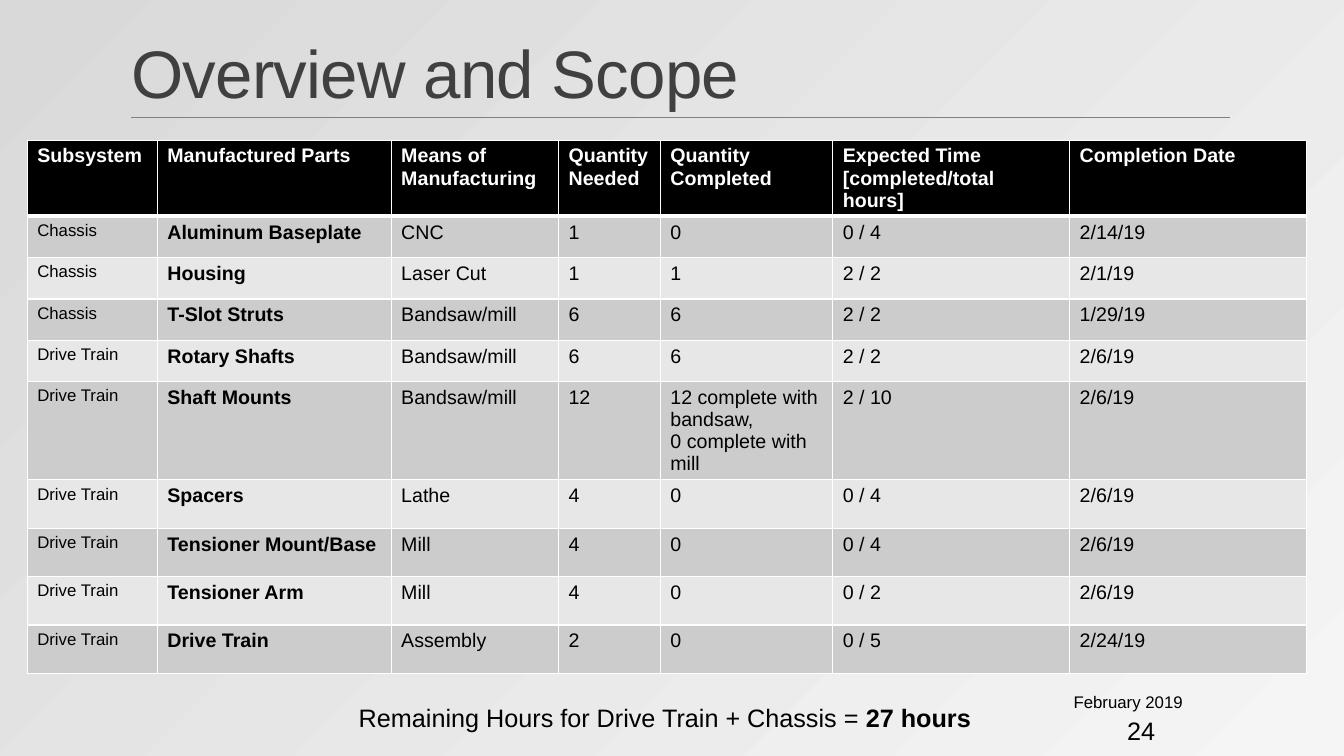
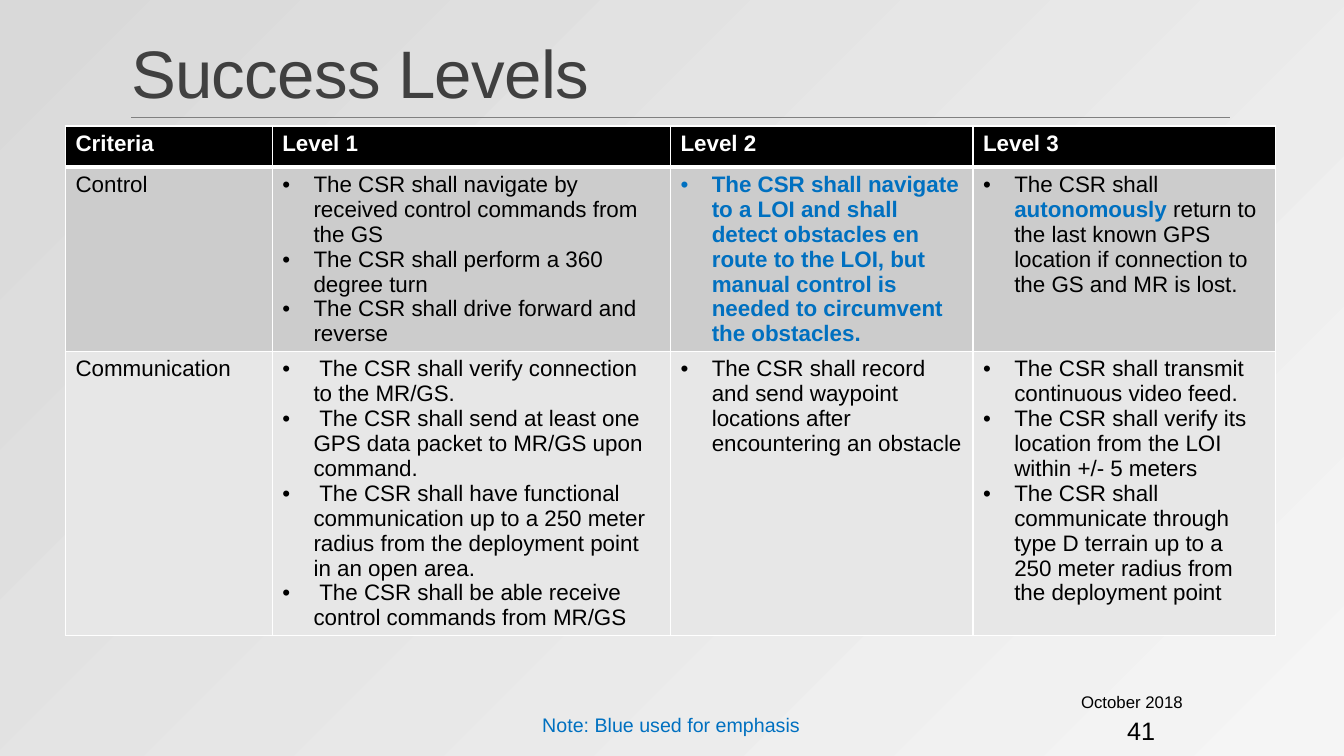
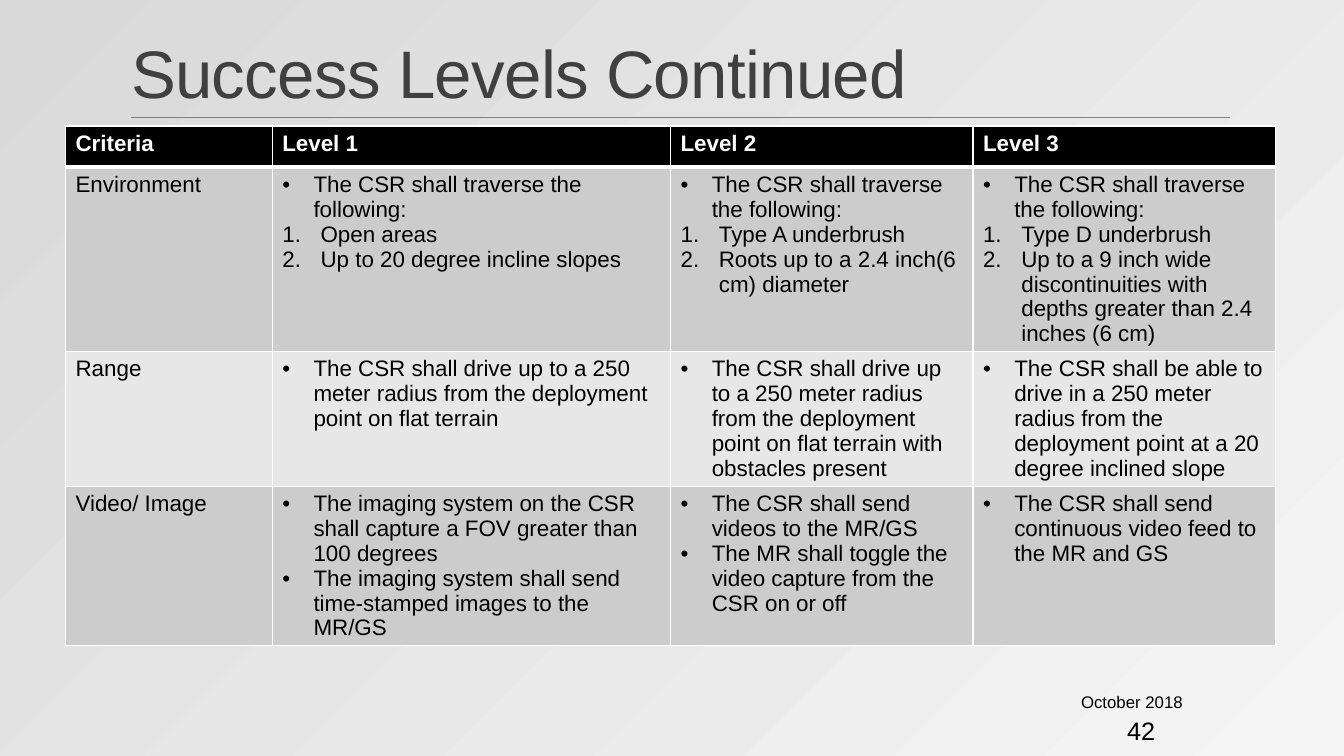
"""Build three project review slides with a parts table and two success level tables."""
from dataclasses import dataclass

from pptx import Presentation
from pptx.dml.color import RGBColor
from pptx.enum.shapes import MSO_CONNECTOR
from pptx.enum.text import MSO_ANCHOR, MSO_AUTO_SIZE as AutoSize, PP_ALIGN
from pptx.oxml import parse_xml
from pptx.oxml.ns import nsdecls, qn
from pptx.util import Pt

PX = 9144


@dataclass(frozen=True)
class Theme:
    font: str = "Arial"
    ink: str = "000000"
    title: str = "404040"
    rule: str = "808080"
    light: str = "F5F5F5"
    dark: str = "D9D9D9"
    white: str = "FFFFFF"
    emphasis: str = "0070C0"
    bands: tuple = ("E7E7E7", "CCCCCC")
    title_size: int = 48
    large: int = 18
    level: int = 16
    normal: int = 14
    small: int = 12


THEME = Theme()

PARTS_COLUMNS = [129, 232, 166, 101, 171, 235, 235]
PARTS_HEIGHTS = [75, 41, 41, 41, 41, 97, 48, 48, 48, 48]
PARTS = [
    ("Subsystem", "Manufactured Parts", "Means of Manufacturing", "Quantity Needed",
     "Quantity Completed", "Expected Time\n[completed/total hours]", "Completion Date"),
    ("Chassis", "Aluminum Baseplate", "CNC", "1", "0", "0 / 4", "2/14/19"),
    ("Chassis", "Housing", "Laser Cut", "1", "1", "2 / 2", "2/1/19"),
    ("Chassis", "T-Slot Struts", "Bandsaw/mill", "6", "6", "2 / 2", "1/29/19"),
    ("Drive Train", "Rotary Shafts", "Bandsaw/mill", "6", "6", "2 / 2", "2/6/19"),
    ("Drive Train", "Shaft Mounts", "Bandsaw/mill", "12",
     "12 complete with bandsaw,\n0 complete with mill", "2 / 10", "2/6/19"),
    ("Drive Train", "Spacers", "Lathe", "4", "0", "0 / 4", "2/6/19"),
    ("Drive Train", "Tensioner Mount/Base", "Mill", "4", "0", "0 / 4", "2/6/19"),
    ("Drive Train", "Tensioner Arm", "Mill", "4", "0", "0 / 2", "2/6/19"),
    ("Drive Train", "Drive Train", "Assembly", "2", "0", "0 / 5", "2/24/19"),
]

LEVEL_COLUMNS = [205, 395, 300, 300]
LEVEL_HEADER = ("Criteria", "Level 1", "Level 2", "Level 3")
LEVELS = [
    LEVEL_HEADER,
    ("Control",
     "• The CSR shall navigate by received control commands from the GS\n"
     "• The CSR shall perform a 360 degree turn\n"
     "• The CSR shall drive forward and reverse",
     "• **The CSR shall navigate to a LOI and shall detect obstacles en route to the LOI, "
     "but manual control is needed to circumvent the obstacles.**",
     "• The CSR shall **autonomously** return to the last known GPS location "
     "if connection to the GS and MR is lost."),
    ("Communication",
     "•  The CSR shall verify connection to the MR/GS.\n"
     "•  The CSR shall send at least one GPS data packet to MR/GS upon command.\n"
     "•  The CSR shall have functional communication up to a 250 meter radius "
     "from the deployment point in an open area.\n"
     "•  The CSR shall be able receive control commands from MR/GS",
     "• The CSR shall record and send waypoint locations after encountering an obstacle",
     "• The CSR shall transmit continuous video feed.\n"
     "• The CSR shall verify its location from the LOI within +/- 5 meters\n"
     "• The CSR shall communicate through type D terrain up to a 250 meter radius "
     "from the deployment point"),
]
LEVELS_CONTINUED = [
    LEVEL_HEADER,
    ("Environment",
     "• The CSR shall traverse the following:\n"
     "# Open areas\n"
     "# Up to 20 degree incline slopes",
     "• The CSR shall traverse the following:\n"
     "# Type A underbrush\n"
     "# Roots up to a 2.4 inch(6 cm) diameter",
     "• The CSR shall traverse the following:\n"
     "# Type D underbrush\n"
     "# Up to a 9 inch wide discontinuities with depths greater than 2.4 inches (6 cm)"),
    ("Range",
     "• The CSR shall drive up to a 250 meter radius from the deployment point on flat terrain",
     "• The CSR shall drive up to a 250 meter radius from the deployment point "
     "on flat terrain with obstacles present",
     "• The CSR shall be able to drive in a 250 meter radius from the deployment point "
     "at a 20 degree inclined slope"),
    ("Video/ Image",
     "• The imaging system on the CSR shall capture a FOV greater than 100 degrees\n"
     "• The imaging system shall send time-stamped images to the MR/GS",
     "• The CSR shall send videos to the MR/GS\n"
     "• The MR shall toggle the video capture from the CSR on or off",
     "• The CSR shall send continuous video feed to the MR and GS"),
]

LIST_MARKS = {
    "• ": (31, '<a:buFont {} typeface="Arial"/>', '<a:buChar {} char="•"/>'),
    "# ": (38, '<a:buFont {} typeface="+mj-lt"/>', '<a:buAutoNum {} type="arabicPeriod"/>'),
}


def px(*lengths):
    """Turn px lengths into EMU."""
    return [length * PX for length in lengths]


def set_values(target, **values):
    """Set attributes of an object from format values."""
    for name, value in values.items():
        setattr(target, name, value)


def text_format(size, color=THEME.ink, bold=False):
    """Return the format values of a run."""
    return {"size": size, "color": color, "bold": bold}


def add_run(paragraph, text, size, color, bold):
    """Add one formatted run to a paragraph."""
    run = paragraph.add_run()
    run.text = text
    set_values(run.font, name=THEME.font, size=Pt(size), bold=bold)
    run.font.color.rgb = RGBColor.from_string(color)
    return run


def mark_list_item(paragraph, mark):
    """Give a paragraph a hanging bullet or number."""
    indent, *elements = LIST_MARKS[mark]
    properties = paragraph._p.get_or_add_pPr()
    properties.set("marL", str(indent * PX))
    properties.set("indent", str(-indent * PX))
    for element in elements:
        properties.append(parse_xml(element.format(nsdecls("a"))))


def write_text(frame, text, style, strong=None):
    """Write lines into a text frame, with list marks and **strong** runs."""
    strong = strong or {**style, "bold": True}
    for index, line in enumerate(text.split("\n")):
        paragraph = frame.add_paragraph() if index else frame.paragraphs[0]
        if line[:2] in LIST_MARKS:
            mark_list_item(paragraph, line[:2])
            line = line[2:]
        for part, piece in enumerate(line.split("**")):
            if piece:
                add_run(paragraph, piece, **(strong if part % 2 else style))


def add_text(slide, box, text, style, wrap=True, align=PP_ALIGN.LEFT):
    """Add a text box."""
    frame = slide.shapes.add_textbox(*px(*box)).text_frame
    auto_size = AutoSize.NONE if wrap else AutoSize.SHAPE_TO_FIT_TEXT
    set_values(frame, word_wrap=wrap, auto_size=auto_size)
    write_text(frame, text, style)
    frame.paragraphs[0].alignment = align


def set_borders(cell, **widths):
    """Draw white cell borders, with widths in points by side."""
    properties = cell._tc.get_or_add_tcPr()
    for side in "LRTB":
        width = Pt(widths.get(side, 1))
        properties.append(parse_xml(
            f'<a:ln{side} {nsdecls("a")} w="{width}"><a:solidFill>'
            f'<a:srgbClr val="{THEME.white}"/></a:solidFill></a:ln{side}>'))


def add_table(slide, origin, columns, heights, rows, size, column_formats=None, strong=None):
    """Add a table with a black header and banded rows."""
    box = px(*origin, sum(columns), sum(heights))
    table = slide.shapes.add_table(len(rows), len(columns), *box).table
    table.horz_banding = False
    for column, width in zip(table.columns, columns):
        column.width = width * PX
    for index, (row, height, texts) in enumerate(zip(table.rows, heights, rows)):
        row.height = height * PX
        fill = THEME.bands[index % 2] if index else THEME.ink
        thick_side = {0: {"B": 3}, 1: {"T": 3}}.get(index, {})
        for position, (cell, text) in enumerate(zip(row.cells, texts)):
            style = text_format(size, THEME.white, True)
            if index:
                style = {**text_format(size), **(column_formats or {}).get(position, {})}
            set_borders(cell, **thick_side)
            cell.fill.solid()
            cell.fill.fore_color.rgb = RGBColor.from_string(fill)
            write_text(cell.text_frame, text, style, strong)


def set_background(master):
    """Give the master a gradient spreading from the bottom right corner."""
    fill = master.background.fill
    fill.gradient()
    for stop, position, color in zip(fill.gradient_stops, (0, 1), (THEME.light, THEME.dark)):
        stop.position = position
        stop.color.rgb = RGBColor.from_string(color)
    gradient = master.element.find(".//" + qn("a:gradFill"))
    gradient.remove(gradient.find(qn("a:lin")))
    gradient.append(parse_xml(
        f'<a:path {nsdecls("a")} path="circle">'
        '<a:fillToRect l="100000" t="100000"/></a:path>'))


def add_title_rule(layout, slide):
    """Draw the title rule and move it to the layout."""
    rule = slide.shapes.add_connector(MSO_CONNECTOR.STRAIGHT, *px(130, 116, 1220, 116))
    rule.line.width = Pt(0.5)
    rule.line.color.rgb = RGBColor.from_string(THEME.rule)
    rule.element.spPr.append(parse_xml(f'<a:effectLst {nsdecls("a")}/>'))
    layout.element.cSld.spTree.append(rule.element)


def add_slide(presentation, layout, title, date, number):
    """Add a slide with its title, date and number."""
    slide = presentation.slides.add_slide(layout)
    shape = slide.shapes.title
    left, top, width, height = px(120, 31, 1100, 85)
    set_values(shape, left=left, top=top, width=width, height=height)
    frame = shape.text_frame
    set_values(frame, vertical_anchor=MSO_ANCHOR.BOTTOM, word_wrap=True, auto_size=AutoSize.NONE)
    paragraph = frame.paragraphs[0]
    set_values(paragraph, alignment=PP_ALIGN.LEFT, line_spacing=0.85)
    run = add_run(paragraph, title, **text_format(THEME.title_size, THEME.title))
    run.font._element.set("spc", "-50")
    add_text(slide, (1108, 705, 76, 40), number, text_format(THEME.large))
    add_text(slide, (1044, 681, 139, 23), date, text_format(THEME.small), align=PP_ALIGN.RIGHT)
    return slide


def main():
    """Build and save the presentation."""
    presentation = Presentation()
    width, height = px(1333, 750)
    set_values(presentation, slide_width=width, slide_height=height)
    layout = presentation.slide_layouts[5]
    set_background(presentation.slide_master)

    overview = add_slide(presentation, layout, "Overview and Scope", "February 2019", "24")
    add_title_rule(layout, overview)
    add_table(overview, (27, 139), PARTS_COLUMNS, PARTS_HEIGHTS, PARTS, THEME.normal,
              column_formats={0: {"size": THEME.small}, 1: {"bold": True}})
    add_text(overview, (346, 692, 647, 40),
             "Remaining Hours for Drive Train + Chassis = **27 hours**",
             text_format(THEME.large), wrap=False)

    strong = text_format(THEME.level, THEME.emphasis, True)
    levels = add_slide(presentation, layout, "Success Levels", "October 2018", "41")
    add_table(levels, (65, 125), LEVEL_COLUMNS, [41, 183, 281], LEVELS, THEME.level,
              strong=strong)
    add_text(levels, (528, 702, 277, 34), "Note: Blue used for emphasis",
             text_format(THEME.normal, THEME.emphasis), wrap=False)

    continued = add_slide(presentation, layout, "Success Levels Continued", "October 2018", "42")
    add_table(continued, (65, 125), LEVEL_COLUMNS, [41, 183, 133, 158], LEVELS_CONTINUED,
              THEME.level)
    presentation.save("out.pptx")


if __name__ == "__main__":
    main()
